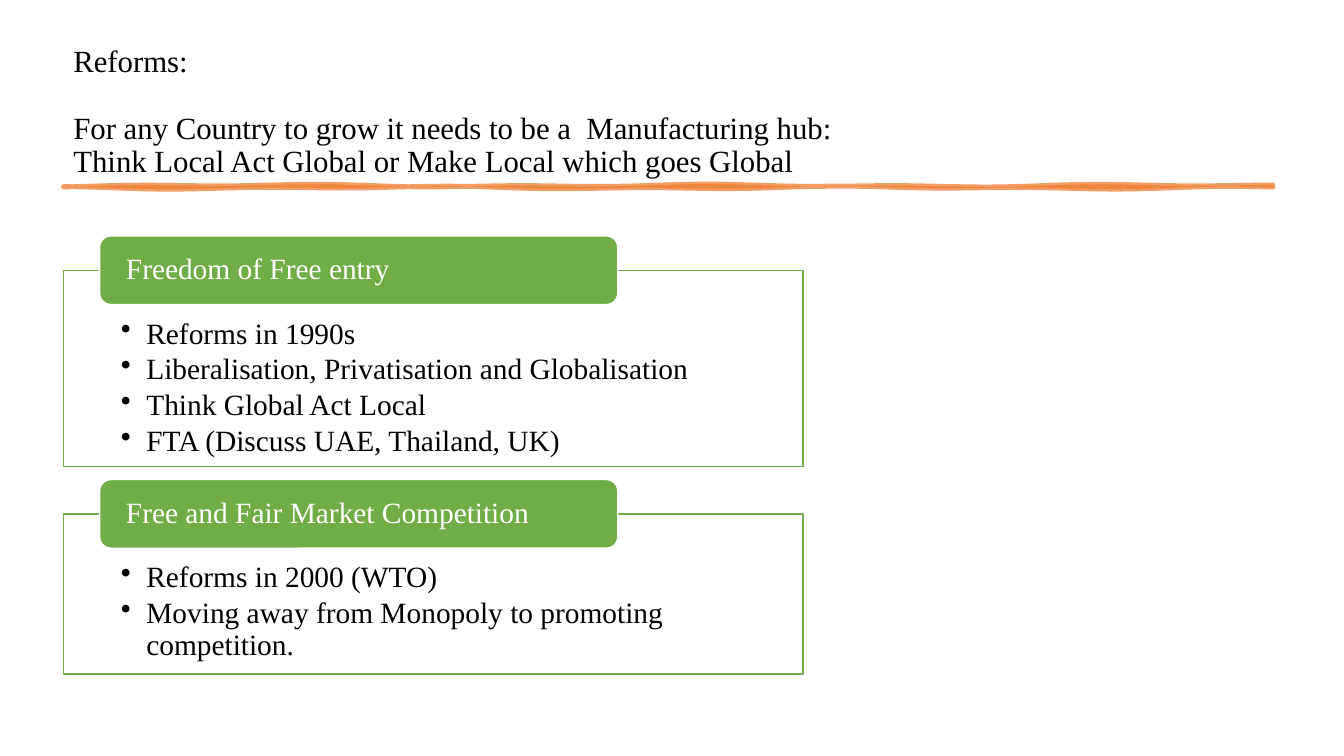
"""Build a slide on reforms with two titled panels below a hand-drawn rule."""
import math
from dataclasses import dataclass

import lxml.etree
import pptx
import pptx.dml.color
import pptx.enum.shapes
import pptx.enum.text
import pptx.oxml.ns
import pptx.util

Cm = pptx.util.Cm
Pt = pptx.util.Pt
Color = pptx.dml.color.RGBColor
Anchor = pptx.enum.text.MSO_ANCHOR
Align = pptx.enum.text.PP_ALIGN
Kind = pptx.enum.shapes.MSO_SHAPE
qn = pptx.oxml.ns.qn


@dataclass(frozen=True)
class Theme:
    font: str = "Times New Roman"
    black: Color = Color(0, 0, 0)
    white: Color = Color(255, 255, 255)
    green: Color = Color(0x70, 0xAD, 0x47)
    orange: Color = Color(0xED, 0x7D, 0x31)
    title: float = 22
    body: float = 21


@dataclass(frozen=True)
class Panel:
    top: float
    height: float
    head: str
    items: tuple[str, ...]


THEME = Theme()
LEFT = 1.6
PANELS = (
    Panel(6.81, 4.95, "Freedom of Free entry", (
        "Reforms in 1990s",
        "Liberalisation, Privatisation and Globalisation",
        "Think Global Act Local",
        "FTA (Discuss UAE, Thailand, UK)",
    )),
    Panel(12.95, 4.04, "Free and Fair Market Competition", (
        "Reforms in 2000 (WTO)",
        "Moving away from Monopoly to promoting competition.",
    )),
)


def write(shape, lines: tuple[str, ...], size: float, color: Color,
          anchor: Anchor, inset: tuple[float, float, float], gap: float) -> None:
    """Fill a shape with left-aligned paragraphs."""
    frame = shape.text_frame
    frame.word_wrap = True
    frame.vertical_anchor = anchor
    side, top, bottom = inset
    frame.margin_left = frame.margin_right = Cm(side)
    frame.margin_top, frame.margin_bottom = Cm(top), Cm(bottom)
    for index, line in enumerate(lines):
        para = frame.add_paragraph() if index else frame.paragraphs[0]
        para.text = line
        para.alignment = Align.LEFT
        para.line_spacing = 0.9
        para.space_after = Pt(gap if index < len(lines) - 1 else 0)
        para.font.name = THEME.font
        para.font.size = Pt(size)
        para.font.color.rgb = color


def bullet(shape) -> None:
    """Give every paragraph of a shape a hanging bullet."""
    for para in shape.text_frame.paragraphs:
        props = para._p.get_or_add_pPr()
        props.set("marL", str(Cm(0.64)))
        props.set("indent", str(-Cm(0.64)))
        mark = lxml.etree.Element(qn("a:buChar"), char="•")
        props.insert_element_before(mark, "a:tabLst", "a:defRPr", "a:extLst")


def block(slide, kind: Kind, box: tuple[float, float, float, float],
          fill: Color, line: Color):
    """Draw a filled and outlined preset shape."""
    shape = slide.shapes.add_shape(kind, *map(Cm, box))
    shape.shadow.inherit = False
    shape.fill.solid()
    shape.fill.fore_color.rgb = fill
    shape.line.color.rgb = line
    shape.line.width = Pt(1)
    return shape


def panel(slide, data: Panel) -> None:
    """Draw a bulleted frame with its heading on the top edge."""
    frame = block(slide, Kind.RECTANGLE, (LEFT, data.top, 18.64, data.height),
                  THEME.white, THEME.green)
    write(frame, data.items, THEME.body, THEME.black, Anchor.TOP,
          (1.45, 1.22, 0.4), 3)
    bullet(frame)
    high = 1.73
    head = block(slide, Kind.ROUNDED_RECTANGLE,
                 (LEFT + 0.91, data.top - high / 2, 13.06, high),
                 THEME.green, THEME.white)
    write(head, (data.head,), THEME.body, THEME.white, Anchor.MIDDLE,
          (0.58, 0, 0), 0)


def wave(pos: float, base: float, phase: float) -> tuple[int, int]:
    """Return a point on a gently uneven edge."""
    sway = math.sin(1.3 * pos + phase) + math.sin(0.57 * pos + 2 * phase)
    return Cm(pos), Cm(base + 0.02 * sway)


def rule(slide) -> None:
    """Draw the translucent brush stroke below the title."""
    steps = [LEFT + 30.48 * step / 120 for step in range(121)]
    upper = [wave(pos, 4.68, 0.4) for pos in steps]
    lower = [wave(pos, 4.73, 2.5) for pos in reversed(steps)]
    pen = slide.shapes.build_freeform(*upper[0])
    pen.add_line_segments(upper[1:] + lower, close=True)
    stroke = pen.convert_to_shape()
    stroke.shadow.inherit = False
    stroke.fill.solid()
    stroke.fill.fore_color.rgb = THEME.orange
    stroke.line.color.rgb = THEME.orange
    stroke.line.width = Pt(3.5)
    props = stroke._element.spPr
    for color in props.iter(qn("a:srgbClr")):
        lxml.etree.SubElement(color, qn("a:alpha"), val="75000")
    lxml.etree.SubElement(props.find(qn("a:ln")), qn("a:round"))


def main() -> None:
    """Build and save the slide."""
    deck = pptx.Presentation()
    deck.slide_width, deck.slide_height = Cm(33.87), Cm(19.05)
    slide = deck.slides.add_slide(deck.slide_layouts[6])
    title = slide.shapes.add_textbox(Cm(LEFT), Cm(0.66), Cm(30.61), Cm(3.99))
    lines = (
        "Reforms:",
        "For any Country to grow it needs to be a  Manufacturing hub:\v"
        "Think Local Act Global or Make Local which goes Global",
    )
    write(title, lines, THEME.title, THEME.black, Anchor.BOTTOM,
          (0.25, 0.13, 0.13), 24)
    rule(slide)
    for data in PANELS:
        panel(slide, data)
    deck.save("out.pptx")


if __name__ == "__main__":
    main()
